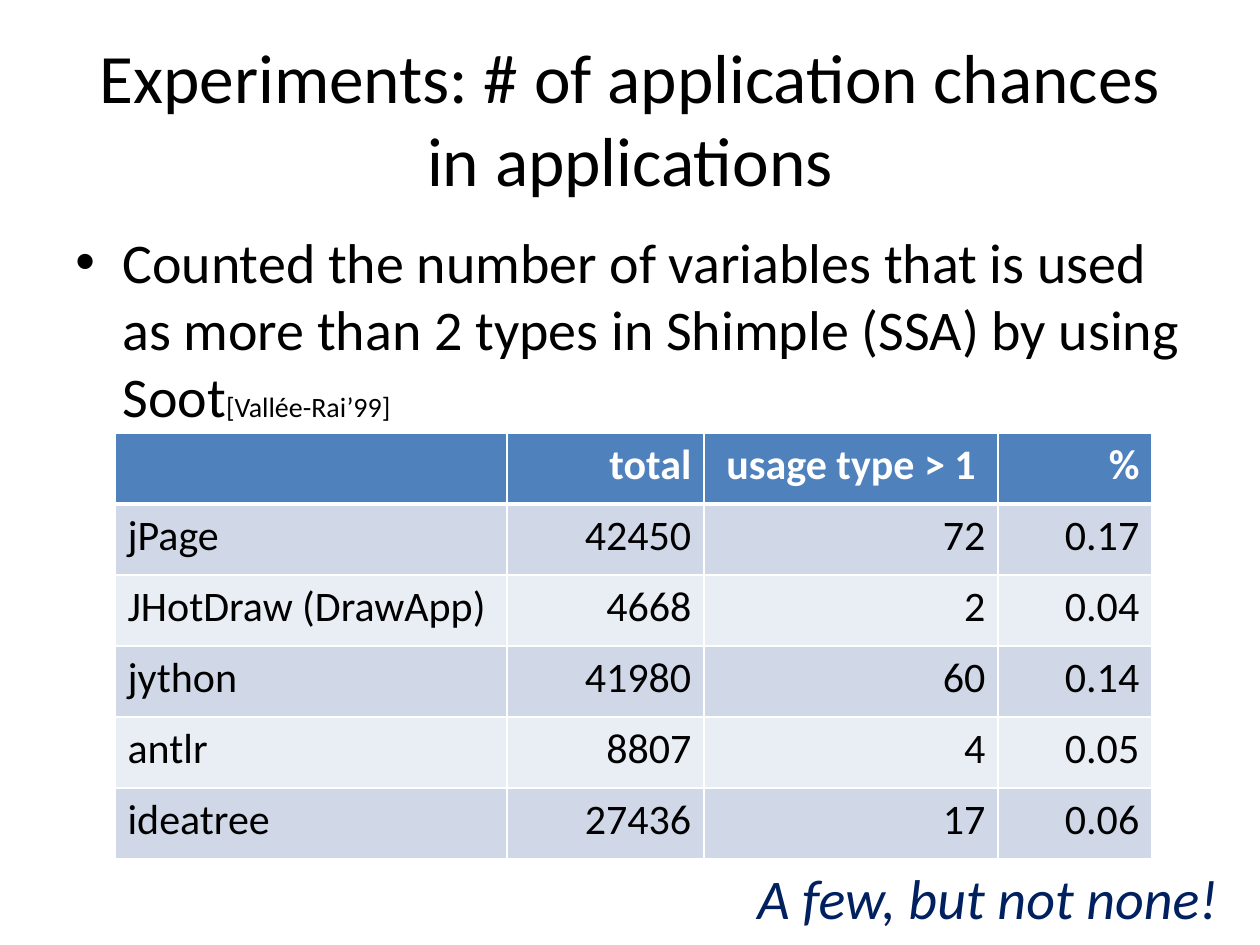
from lxml.etree import SubElement
from pptx import Presentation
from pptx.dml.color import RGBColor
from pptx.enum.text import MSO_ANCHOR, MSO_AUTO_SIZE, PP_ALIGN
from pptx.oxml.ns import qn
from pptx.util import Emu, Pt

SCALE = 914400 / 126  # EMU per px
COLORS = {"text": "000000", "white": "FFFFFF", "note": "002060",
          "header": "4F81BD", "odd": "D0D8E8", "even": "E9EDF4"}


def px(*lengths):
    return [Emu(round(length * SCALE)) for length in lengths]


def write(paragraph, text, color, **formats):
    run = paragraph.add_run()
    run.text = text
    run.font.color.rgb = RGBColor.from_string(COLORS[color])
    for key, value in {"name": "Calibri", **formats}.items():
        setattr(run.font, key, value)


deck = Presentation()
deck.slide_width, deck.slide_height = px(1260, 945)
slide = deck.slides.add_slide(deck.slide_layouts[5])

# Title
title = slide.shapes.title
title.left, title.top, title.width, title.height = px(63, 38, 1134, 158)
title.text_frame.vertical_anchor = MSO_ANCHOR.MIDDLE
heading = title.text_frame.paragraphs[0]
heading.alignment = PP_ALIGN.CENTER
write(heading, "Experiments: # of application chances in applications",
      "text", size=Pt(39.6))

# Table of variable counts
rows = [
    ("", "total", "usage type > 1 ", "%"),
    ("jPage", "42450", "72", "0.17"),
    ("JHotDraw (DrawApp)", "4668", "2", "0.04"),
    ("jython", "41980", "60", "0.14"),
    ("antlr", "8807", "4", "0.05"),
    ("ideatree", "27436", "17", "0.06"),
]
column_widths = px(392, 197, 294, 154)
row_height, = px(71)
counts = slide.shapes.add_table(
    len(rows), len(column_widths), *px(115, 433),
    sum(column_widths), row_height * len(rows)).table
for column, width in zip(counts.columns, column_widths):
    column.width = width

for r, row in enumerate(rows):
    counts.rows[r].height = row_height
    fill = "header" if r == 0 else "odd" if r % 2 else "even"
    for c, value in enumerate(row):
        cell = counts.cell(r, c)
        # Borders, with a thick rule under the header
        for side in ("lnL", "lnR", "lnT", "lnB"):
            thick = (r, side) in ((0, "lnB"), (1, "lnT"))
            border = SubElement(cell._tc.get_or_add_tcPr(), qn(f"a:{side}"),
                                w=str(Pt(3 if thick else 1)))
            border_fill = SubElement(border, qn("a:solidFill"))
            SubElement(border_fill, qn("a:srgbClr"), val=COLORS["white"])
        cell.fill.solid()
        cell.fill.fore_color.rgb = RGBColor.from_string(COLORS[fill])
        entry = cell.text_frame.paragraphs[0]
        entry.alignment = PP_ALIGN.RIGHT if c else PP_ALIGN.LEFT
        if value:
            write(entry, value, "text" if r else "white",
                  size=Pt(24), bold=r == 0)

# Bulleted statement
statement = slide.shapes.add_textbox(*px(63, 221, 1134, 624)).text_frame
statement.word_wrap = True
bullet = statement.paragraphs[0]
bullet.space_before = Pt(6.4)
indent, = px(47)
bullet_format = bullet._p.get_or_add_pPr()
bullet_format.set("marL", str(indent))
bullet_format.set("indent", str(-indent))
SubElement(bullet_format, qn("a:buFont"), typeface="Arial")
SubElement(bullet_format, qn("a:buChar"), char="•")
write(bullet, "Counted the number of variables that is used as more than "
      "2 types in Shimple (SSA) by using Soot", "text", size=Pt(32))
write(bullet, "[Vallée-Rai’99]", "text", size=Pt(16))

# Closing remark
remark = slide.shapes.add_textbox(*px(745, 857, 495, 80)).text_frame
remark.word_wrap = False
remark.auto_size = MSO_AUTO_SIZE.SHAPE_TO_FIT_TEXT
write(remark.paragraphs[0], "A few, but not none!", "note",
      size=Pt(32), italic=True)

deck.save("out.pptx")
